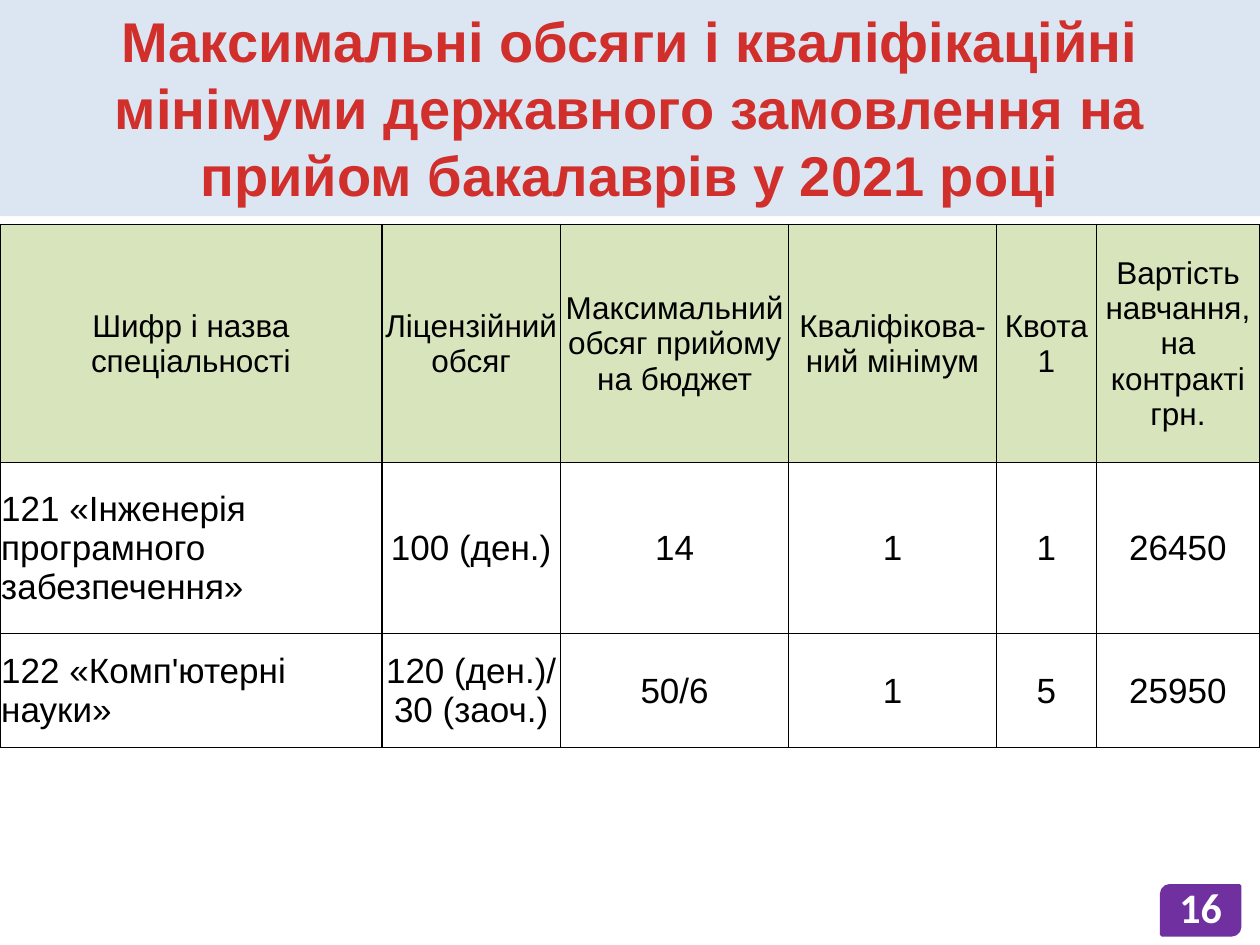
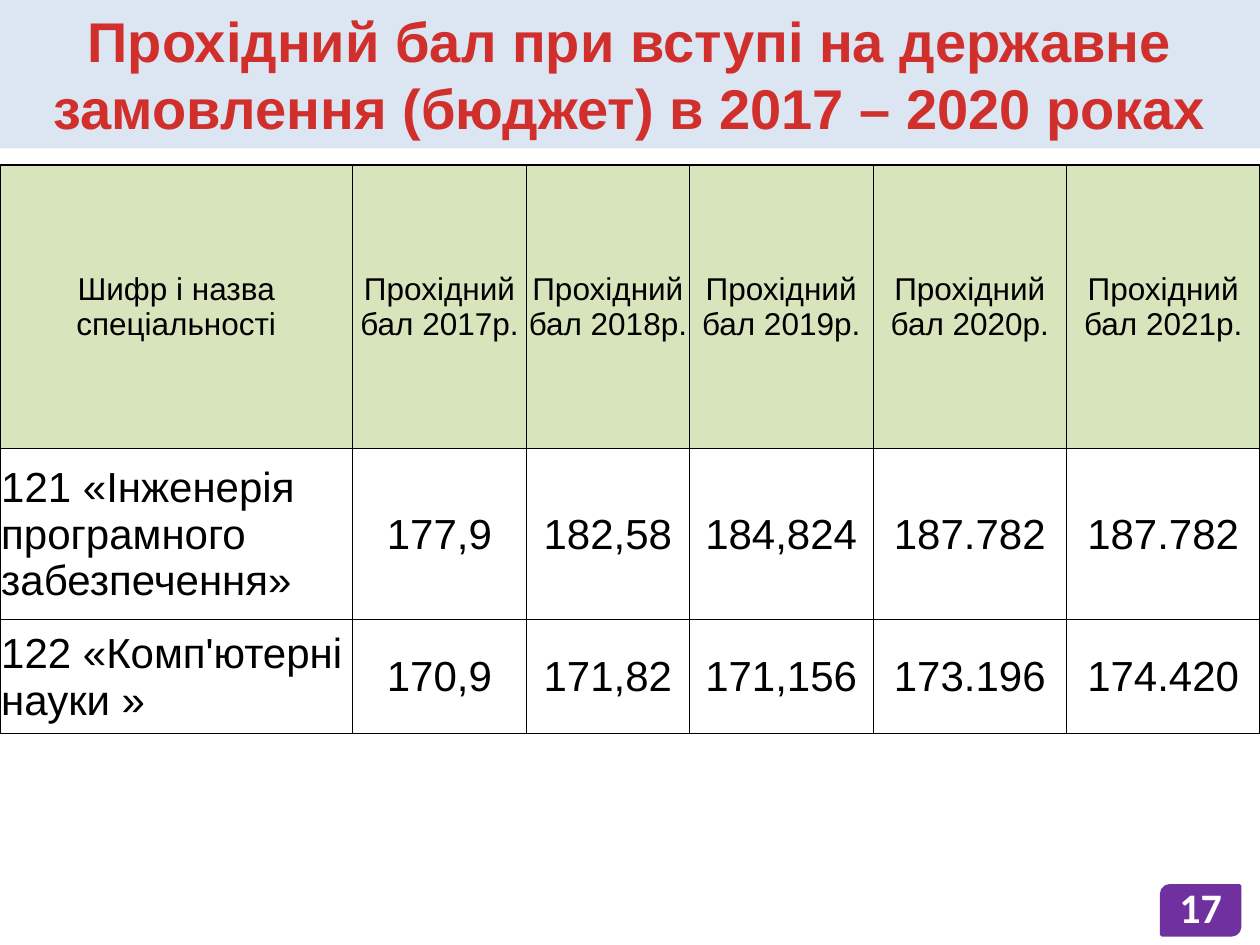
"""Build two slides on admission quotas and passing scores."""
from pptx import Presentation
from pptx.dml.color import RGBColor
from pptx.enum.shapes import MSO_SHAPE as Shape
from pptx.enum.text import MSO_ANCHOR as Anchor, MSO_AUTO_SIZE as AutoSize, PP_ALIGN as Align
from pptx.oxml.ns import qn
from pptx.util import Pt
from lxml.etree import SubElement

BAND, RED, HEADER, PURPLE = "DCE6F2", "D02F2C", "D7E4BC", "7030A0"
BLACK, WHITE = "000000", "FFFFFF"
WIDTH, HEIGHT = 720, 540
THICK, THIN = 1, 0.5


def rgb(color):
    return RGBColor.from_string(color)


def fill_solid(item, color):
    item.fill.solid()
    item.fill.fore_color.rgb = rgb(color)


def add_run(p, text, size, color, font="Arial", bold=False):
    r = p.add_run()
    r.text = text
    r.font.name, r.font.size, r.font.bold = font, Pt(size), bold
    r.font.color.rgb = rgb(color)


def add_title(s, text, height):
    sp = s.shapes.title
    sp.left, sp.top, sp.width, sp.height = Pt(0), Pt(0), Pt(WIDTH), Pt(height)
    fill_solid(sp, BAND)
    tf = sp.text_frame
    tf.auto_size, tf.word_wrap = AutoSize.NONE, True
    tf.vertical_anchor = Anchor.TOP
    p = tf.paragraphs[0]
    p.alignment = Align.CENTER
    add_run(p, text, 32, RED, bold=True)


def set_borders(cell, row, col, last_col):
    widths = {
        "a:lnL": THICK if col <= 1 else THIN,
        "a:lnR": THICK if col in (0, last_col) else THIN,
        "a:lnT": THICK if row <= 1 else THIN,
        "a:lnB": THICK if row == 0 else THIN,
    }
    tc_pr = cell._tc.get_or_add_tcPr()
    for tag, width in widths.items():
        ln = SubElement(tc_pr, qn(tag), w=str(Pt(width)))
        SubElement(SubElement(ln, qn("a:solidFill")), qn("a:srgbClr"), val=BLACK)


def fill_cell(cell, text, size, align):
    cell.margin_left = cell.margin_top = cell.margin_right = Pt(0.72)
    cell.margin_bottom = Pt(0)
    cell.vertical_anchor = Anchor.MIDDLE
    tf = cell.text_frame
    for i, line in enumerate(text.split("\n")):
        p = tf.add_paragraph() if i else tf.paragraphs[0]
        p.alignment = align
        add_run(p, line, size, BLACK)


def add_grid(s, top, col_widths, row_heights, rows, body_size):
    frame = s.shapes.add_table(len(rows), len(col_widths), Pt(0), Pt(top),
                               Pt(WIDTH), Pt(sum(row_heights)))
    table = frame.table
    table.first_row = table.horz_banding = False
    for column, width in zip(table.columns, col_widths):
        column.width = Pt(width)
    for table_row, height in zip(table.rows, row_heights):
        table_row.height = Pt(height)
    for r, values in enumerate(rows):
        for c, text in enumerate(values):
            cell = table.cell(r, c)
            set_borders(cell, r, c, len(values) - 1)
            if r == 0:
                fill_solid(cell, HEADER)
            else:
                cell.fill.background()
            align = Align.LEFT if r and c == 0 else Align.CENTER
            fill_cell(cell, text, body_size if r else 18, align)


def add_page_number(s, number):
    group = s.shapes.add_group_shape()
    left, width = Pt(663.8), Pt(44.6)
    badge = group.shapes.add_shape(Shape.ROUND_2_DIAG_RECTANGLE, left, Pt(506.2), width, Pt(28))
    badge.shadow.inherit = False
    fill_solid(badge, PURPLE)
    badge.line.color.rgb = rgb(PURPLE)
    badge.line.width = Pt(2)
    tf = group.shapes.add_textbox(left, Pt(500.4), width, Pt(27.4)).text_frame
    tf.word_wrap = True
    p = tf.paragraphs[0]
    p.alignment = Align.CENTER
    add_run(p, str(number), 24, WHITE, "Calibri", True)


def add_table_slide(prs, number, title, band_height, **grid):
    s = prs.slides.add_slide(prs.slide_layouts[5])
    add_title(s, title, band_height)
    add_grid(s, **grid)
    add_page_number(s, number)


def main():
    prs = Presentation()
    prs.slide_width, prs.slide_height = Pt(WIDTH), Pt(HEIGHT)
    add_table_slide(
        prs, 16,
        "Максимальні обсяги і кваліфікаційні мінімуми державного замовлення "
        "на прийом бакалаврів у 2021 році", 123.6,
        top=128.2, col_widths=[218.2, 102.2, 130.3, 118.8, 56.9, 93.6],
        row_heights=[136, 97.5, 65.5], body_size=20,
        rows=[
            ["Шифр і назва спеціальності", "Ліцензійний обсяг",
             "Максимальний обсяг прийому на бюджет", "Кваліфікова-ний мінімум",
             "Квота 1", "Вартість навчання, на контракті грн."],
            ["121 «Інженерія програмного забезпечення»", "100 (ден.)", "14", "1", "1", "26450"],
            ["122 «Комп'ютерні науки»", "120 (ден.)/\n30 (заоч.)", "50/6", "1", "5", "25950"],
        ])
    years = range(2017, 2022)
    add_table_slide(
        prs, 17,
        "Прохідний бал при вступі на державне замовлення (бюджет) в 2017 – 2020 роках", 84.8,
        top=94.3, col_widths=[201.4, 99.5, 93, 105.1, 110.5, 110.5],
        row_heights=[162, 97.5, 65.5], body_size=24,
        rows=[
            ["Шифр і назва спеціальності"] + [f"Прохідний бал {year}р." for year in years],
            ["121 «Інженерія програмного забезпечення»",
             "177,9", "182,58", "184,824", "187.782", "187.782"],
            ["122 «Комп'ютерні науки »",
             "170,9", "171,82", "171,156", "173.196", "174.420"],
        ])
    prs.save("out.pptx")


if __name__ == "__main__":
    main()
